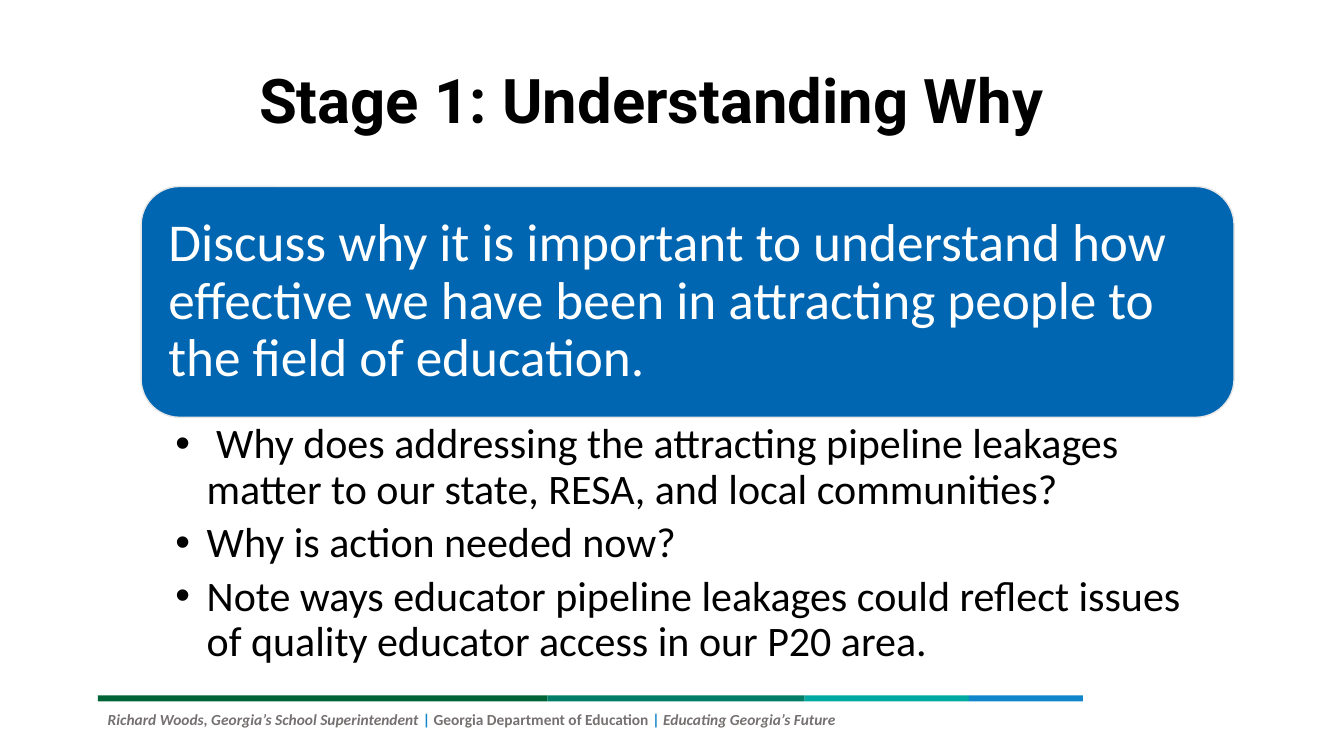
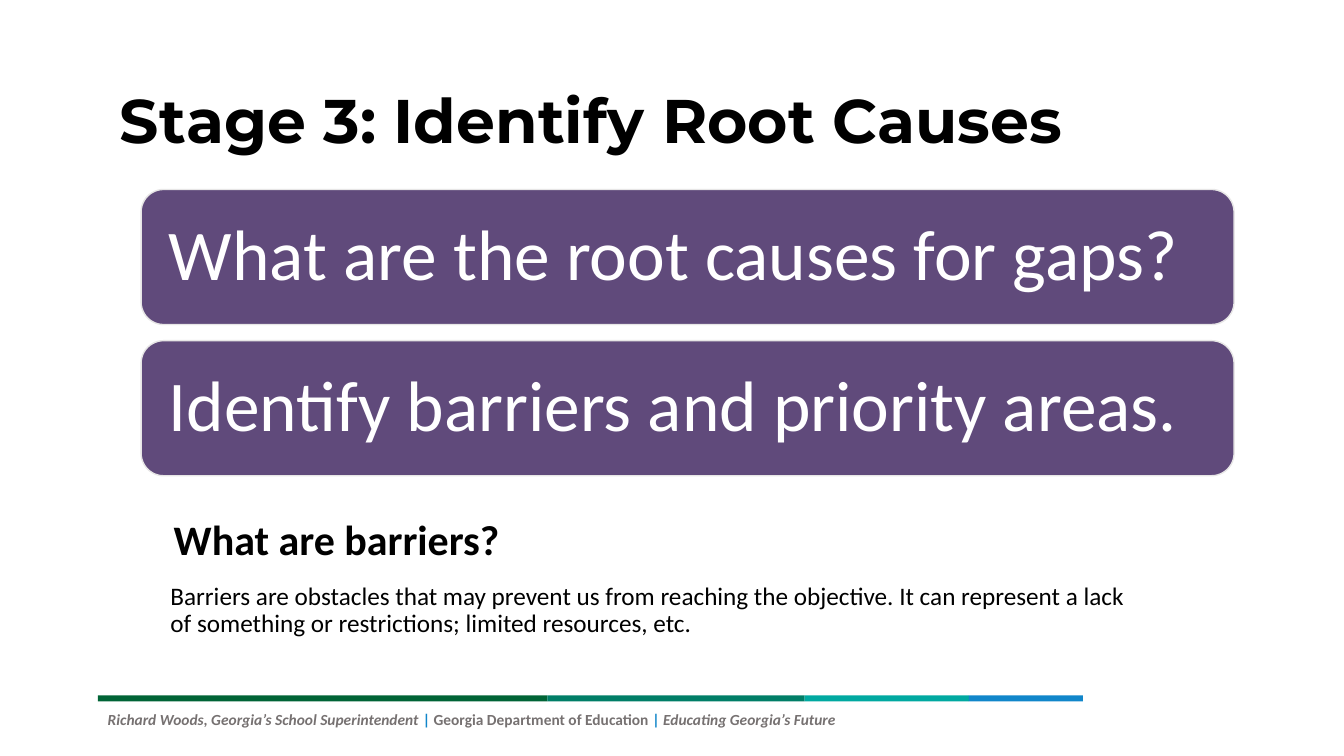
from lxml import etree
from pptx import Presentation
from pptx.dml.color import RGBColor
from pptx.enum.shapes import MSO_SHAPE
from pptx.enum.text import MSO_ANCHOR, MSO_AUTO_SIZE, PP_ALIGN
from pptx.oxml.ns import qn
from pptx.util import Emu, Pt

RECTANGLE, ROUNDED = MSO_SHAPE.RECTANGLE, MSO_SHAPE.ROUNDED_RECTANGLE
LEFT, CENTER = PP_ALIGN.LEFT, PP_ALIGN.CENTER
TOP, MIDDLE = MSO_ANCHOR.TOP, MSO_ANCHOR.MIDDLE
NO_FIT = MSO_AUTO_SIZE.NONE
TITLE_AND_BODY, TITLE_ONLY = 1, 5

PX = 9144  # 100 px to the inch
COLORS = {
    "black": "000000", "white": "FFFFFF", "gray": "767171", "outline": "E7E6E6",
    "blue": "0066B2", "purple": "604A7B", "forest": "006436", "green": "007E67",
    "teal": "00A9A1", "sky": "1186CA",
}
BAND = [("forest", 446), ("green", 255), ("teal", 163), ("sky", 113)]
FOOTER = [
    ("Richard Woods, Georgia’s School Superintendent ", "gray", True),
    ("|", "sky", False),
    (" Georgia Department of Education ", "gray", False),
    ("| ", "sky", False),
    ("Educating Georgia’s Future", "gray", True),
]


def px(value):
    return Emu(value * PX)


def color(name):
    return RGBColor.from_string(COLORS[name])


class Deck:
    """Holds the shared style and the current page."""

    def __init__(self, width, height):
        self.file = Presentation()
        self.file.slide_width, self.file.slide_height = px(width), px(height)
        self.page = None

    def new_page(self, layout):
        self.page = self.file.slides.add_slide(self.file.slide_layouts[layout])
        self.footer()

    def place(self, box, at):
        box.left, box.top, box.width, box.height = map(px, at)

    def frame(self, box, margins, anchor=TOP):
        frame = box.text_frame
        frame.word_wrap = True
        frame.auto_size = NO_FIT
        frame.vertical_anchor = anchor
        (frame.margin_left, frame.margin_top,
         frame.margin_right, frame.margin_bottom) = map(px, margins)
        return frame

    def format(self, para, align=LEFT, after=0):
        para.alignment = align
        para.line_spacing = 0.9
        para.space_before = Pt(0)
        para.space_after = Pt(after)

    def span(self, para, text, size, ink="black", bold=False, italic=False, font="Calibri"):
        span = para.add_run()
        span.text = text
        span.font.name, span.font.size = font, Pt(size)
        span.font.bold, span.font.italic = bold, italic
        span.font.color.rgb = color(ink)

    def shape(self, kind, at, fill, line=None):
        shape = self.page.shapes.add_shape(kind, *map(px, at))
        shape.shadow.inherit = False
        shape.fill.solid()
        shape.fill.fore_color.rgb = color(fill)
        if line:
            shape.line.color.rgb = color(line)
            shape.line.width = Pt(1)
        else:
            shape.line.fill.background()
        return shape

    def footer(self):
        left = 97
        for fill, width in BAND:
            self.shape(RECTANGLE, (left, 690, width, 6), fill)
            left += width
        box = self.page.shapes.add_textbox(*map(px, (97, 700, 1200, 47)))
        para = self.frame(box, (10, 5, 10, 5)).paragraphs[0]
        for text, ink, italic in FOOTER:
            self.span(para, text, 11, ink, bold=True, italic=italic)

    def title(self, text, at, font, align):
        box = self.page.shapes.title
        self.place(box, at)
        para = self.frame(box, (10, 5, 10, 5), MIDDLE).paragraphs[0]
        self.format(para, align)
        self.span(para, text, 44, bold=True, font=font)

    def panel(self, text, at, fill, size, margin):
        box = self.shape(ROUNDED, at, fill, "outline")
        para = self.frame(box, [margin] * 4, MIDDLE).paragraphs[0]
        self.format(para)
        self.span(para, text, size, "white")

    def bullets(self, items, at):
        box = self.page.placeholders[1]
        self.place(box, at)
        frame = self.frame(box, (34, 5, 30, 5))
        for index, item in enumerate(items):
            para = frame.add_paragraph() if index else frame.paragraphs[0]
            props = para._p.get_or_add_pPr()
            props.set("marL", str(px(31)))
            props.set("indent", str(px(-31)))
            etree.SubElement(props, qn("a:buFont")).set("typeface", "Arial")
            etree.SubElement(props, qn("a:buChar")).set("char", "•")
            self.format(para, after=6)
            self.span(para, item, 30)

    def text(self, text, at, size, align=LEFT, bold=False):
        box = self.page.shapes.add_textbox(*map(px, at))
        para = self.frame(box, (0, 0, 0, 0)).paragraphs[0]
        self.format(para, align)
        self.span(para, text, size, bold=bold)


def main():
    deck = Deck(1333, 750)

    # Stage 1
    deck.new_page(TITLE_AND_BODY)
    deck.title("Stage 1: Understanding Why", (156, 41, 981, 124), "Roboto", CENTER)
    deck.panel("Discuss why it is important to understand how effective we have been "
               "in attracting people to the field of education.",
               (140, 185, 1084, 229), "blue", 38, 16)
    deck.bullets([
        " Why does addressing the attracting pipeline leakages matter to our state, "
        "RESA, and local communities?",
        "Why is action needed now?",
        "Note ways educator pipeline leakages could reflect issues of quality educator "
        "access in our P20 area.",
    ], (140, 414, 1084, 262))

    # Stage 3
    deck.new_page(TITLE_ONLY)
    deck.title("Stage 3: Identify Root Causes", (109, 61, 1115, 124), "Montserrat", LEFT)
    prompts = ["What are the root causes for gaps?", "Identify barriers and priority areas."]
    for row, prompt in enumerate(prompts):
        deck.panel(prompt, (140, 188 + 150 * row, 1084, 134), "purple", 51, 21)
    deck.text("What are barriers?", (98, 515, 472, 71), 30, CENTER, bold=True)
    deck.text("Barriers are obstacles that may prevent us from reaching the objective. "
              "It can represent a lack of something or restrictions; limited resources, etc.",
              (169, 579, 949, 79), 18)

    deck.file.save("out.pptx")


if __name__ == "__main__":
    main()
